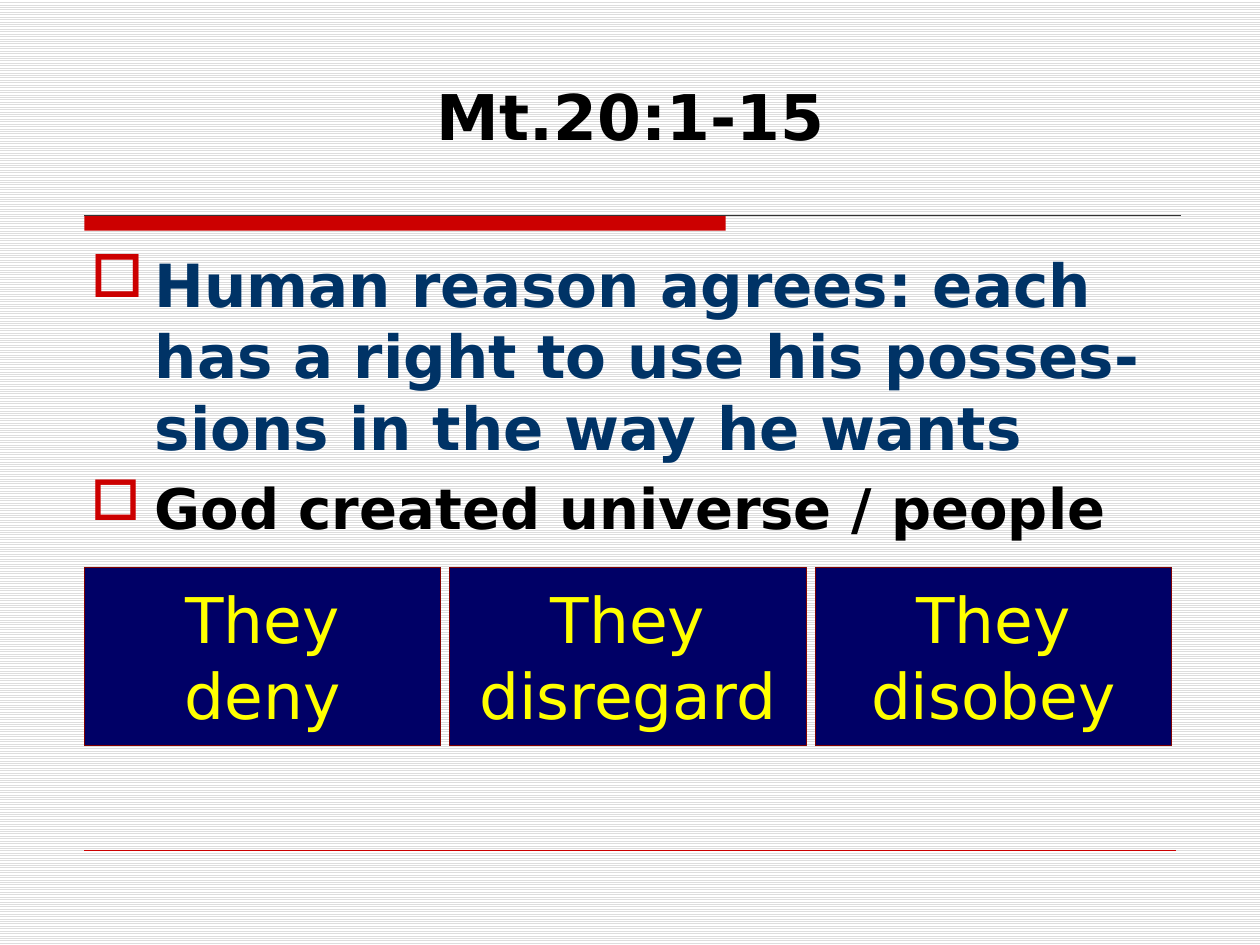
from dataclasses import dataclass

from lxml.etree import SubElement
from pptx import Presentation
from pptx.dml.color import RGBColor
from pptx.enum.dml import MSO_PATTERN
from pptx.enum.shapes import MSO_CONNECTOR as Connector, MSO_SHAPE as Shape
from pptx.enum.text import MSO_ANCHOR as Anchor, PP_ALIGN as Align
from pptx.oxml.ns import qn
from pptx.util import Inches, Pt


@dataclass(frozen=True)
class Theme:
    font: str = "DejaVu Sans"
    paper: str = "FFFFFF"
    stripe: str = "DDDDDD"
    accent: str = "CC0000"
    hairline: str = "333333"
    ink: str = "000000"
    navy: str = "003366"
    panel: str = "000066"
    panel_edge: str = "800000"
    panel_ink: str = "FFFF00"
    heading_size: int = 36
    reason_size: int = 34
    creation_size: int = 32


THEME = Theme()
LEFT = 0.67
PANEL_WIDTH = 2.83
PANEL_PITCH = 2.9
INDENT = 0.51


def color(value):
    return RGBColor.from_string(value)


def set_background(page):
    fill = page.background.fill
    fill.patterned()
    fill.pattern = MSO_PATTERN.LIGHT_HORIZONTAL
    fill.fore_color.rgb = color(THEME.stripe)
    fill.back_color.rgb = color(THEME.paper)


def add_span(para, text, size, ink, bold=False):
    span = para.add_run()
    span.text = text
    span.font.color.rgb = color(ink)
    formats = {"name": THEME.font, "size": Pt(size), "bold": bold}
    for name, value in formats.items():
        setattr(span.font, name, value)


def add_text_box(page, left, top, width, height, anchor):
    box = page.shapes.add_textbox(
        Inches(left), Inches(top), Inches(width), Inches(height))
    frame = box.text_frame
    frame.word_wrap = True
    frame.vertical_anchor = anchor
    return frame


def add_rectangle(page, left, top, width, height, fill):
    box = page.shapes.add_shape(
        Shape.RECTANGLE,
        Inches(left), Inches(top), Inches(width), Inches(height))
    box.shadow.inherit = False
    box.fill.solid()
    box.fill.fore_color.rgb = color(fill)
    box.line.fill.background()
    return box


def add_rule(page, right, top, ink, weight):
    """Draw a horizontal line from the left margin."""
    rule = page.shapes.add_connector(
        Connector.STRAIGHT,
        Inches(LEFT), Inches(top), Inches(right), Inches(top))
    rule.line.color.rgb = color(ink)
    rule.line.width = Pt(weight)
    SubElement(rule._element.spPr, qn("a:effectLst"))


def add_title(page, text):
    frame = add_text_box(page, 0.63, 0.33, 8.75, 1.17, Anchor.MIDDLE)
    para = frame.paragraphs[0]
    para.alignment = Align.CENTER
    add_span(para, text, THEME.heading_size, THEME.ink, bold=True)


def add_bullet(para):
    """Give the paragraph a hanging indent and a square bullet."""
    properties = para._p.get_or_add_pPr()
    properties.set("marL", str(Inches(INDENT)))
    properties.set("indent", str(-Inches(INDENT)))
    bullet_color = SubElement(properties, qn("a:buClr"))
    SubElement(bullet_color, qn("a:srgbClr"), val=THEME.accent)
    SubElement(properties, qn("a:buChar"), char="□")


def add_points(page, points):
    frame = add_text_box(page, 0.62, 1.92, 8.75, 4.67, Anchor.TOP)
    for index, (text, size, ink) in enumerate(points):
        para = frame.add_paragraph() if index else frame.paragraphs[0]
        para.space_before = Pt(0.2 * size)
        add_bullet(para)
        add_span(para, text, size, ink, bold=True)


def add_panel(page, index, verb):
    left = LEFT + index * PANEL_PITCH
    panel = add_rectangle(page, left, 4.5, PANEL_WIDTH, 1.42, THEME.panel)
    panel.line.color.rgb = color(THEME.panel_edge)
    panel.line.width = Pt(0.5)
    frame = panel.text_frame
    frame.word_wrap = True
    frame.vertical_anchor = Anchor.MIDDLE
    para = frame.paragraphs[0]
    para.alignment = Align.CENTER
    add_span(para, "They", THEME.heading_size, THEME.panel_ink)
    para.add_line_break()
    add_span(para, verb, THEME.heading_size, THEME.panel_ink)


def main():
    deck = Presentation()
    deck.slide_width, deck.slide_height = Inches(10), Inches(7.5)
    page = deck.slides.add_slide(deck.slide_layouts[6])
    set_background(page)

    add_rectangle(page, LEFT, 1.71, 5.09, 0.12, THEME.accent)
    add_rule(page, 9.37, 1.71, THEME.hairline, 0.75)
    add_rule(page, 9.33, 6.75, THEME.accent, 0.25)

    add_title(page, "Mt.20:1-15")
    add_points(page, [
        ("Human reason agrees: each has a right to use his posses-sions "
         "in the way he wants", THEME.reason_size, THEME.navy),
        ("God created universe / people", THEME.creation_size, THEME.ink),
    ])
    for index, verb in enumerate(["deny", "disregard", "disobey"]):
        add_panel(page, index, verb)

    deck.save("out.pptx")


if __name__ == "__main__":
    main()
